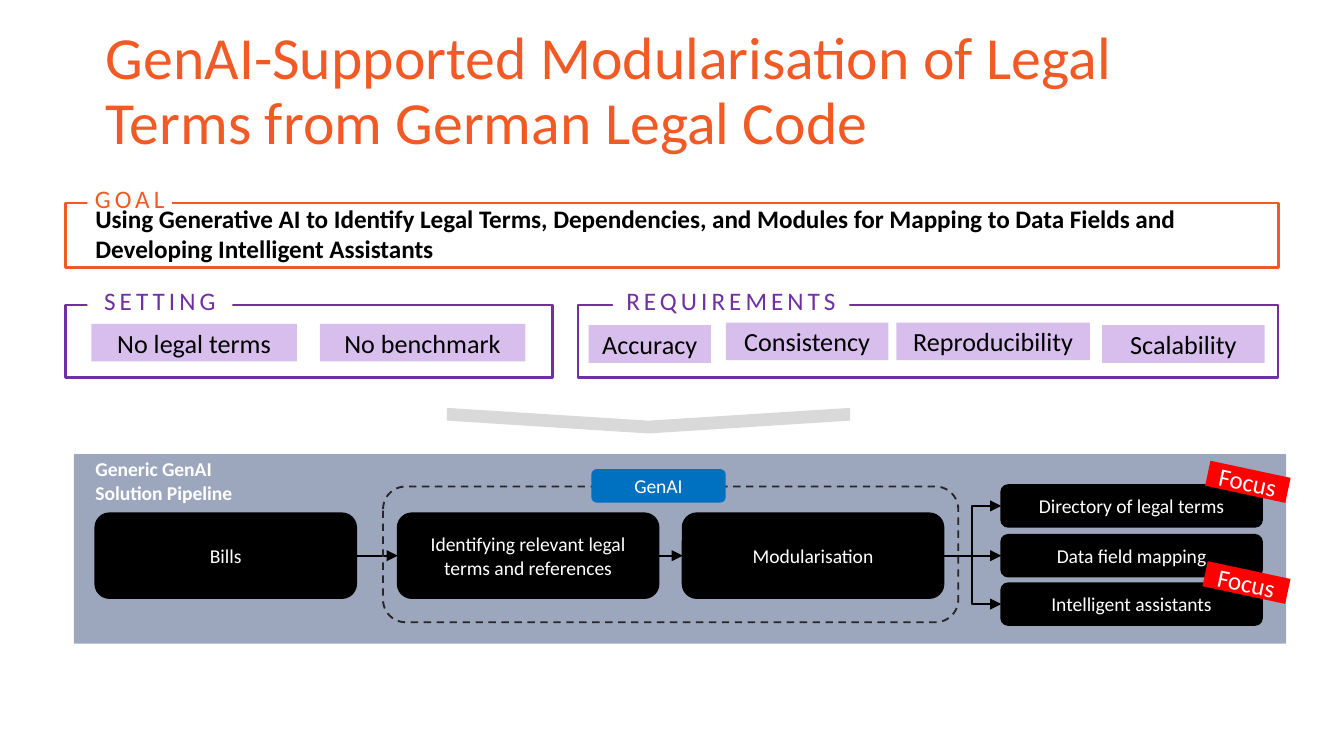
from lxml import etree
from pptx import Presentation
from pptx.dml.color import RGBColor
from pptx.enum.dml import MSO_LINE
from pptx.enum.shapes import MSO_CONNECTOR, MSO_SHAPE
from pptx.enum.text import MSO_ANCHOR, PP_ALIGN
from pptx.oxml.ns import qn
from pptx.util import Pt

PX = 9144  # 100 px to the inch
SLIDE_WIDTH = 1000 * PX
SLIDE_HEIGHT = SLIDE_WIDTH * 9 // 16
RECT, ROUND, CHEVRON = MSO_SHAPE.RECTANGLE, MSO_SHAPE.ROUNDED_RECTANGLE, MSO_SHAPE.CHEVRON
STRAIGHT, ELBOW = MSO_CONNECTOR.STRAIGHT, MSO_CONNECTOR.ELBOW
TOP, MIDDLE, BOTTOM = MSO_ANCHOR.TOP, MSO_ANCHOR.MIDDLE, MSO_ANCHOR.BOTTOM
LEFT, CENTER = PP_ALIGN.LEFT, PP_ALIGN.CENTER
LEFT_SIDE, RIGHT_SIDE = 1, 3

FONT = "Calibri"
COLORS = {
    "orange": "F15A24", "purple": "7030A0", "lilac": "D8BEEC", "panel": "374A78",
    "blue": "0070C0", "red": "FF0000", "grey": "D9D9D9", "dash": "262626",
    "black": "000000", "white": "FFFFFF",
}

TITLE = "GenAI-Supported Modularisation of Legal Terms from German Legal Code"
GOAL = ("Using Generative AI to Identify Legal Terms, Dependencies, and Modules "
        "for Mapping to Data Fields and Developing Intelligent Assistants")
PIPELINE_TITLE = ["Generic GenAI", "Solution Pipeline"]

# heading, colour, frame box, heading left and width
SECTIONS = [
    ("GOAL", "orange", (49, 151, 902, 48), 65, 63),
    ("SETTING", "purple", (49, 227, 362, 54), 65, 108),
    ("REQUIREMENTS", "purple", (430, 227, 521, 54), 456, 176),
]
# text, left, top, width
CHIPS = [
    ("No legal terms", 68, 241, 153),
    ("No benchmark", 238, 241, 153),
    ("Accuracy", 438, 242, 91),
    ("Consistency", 540, 240, 121),
    ("Reproducibility", 667, 240, 144),
    ("Scalability", 820, 242, 121),
]
STAGES = [
    ("Bills", 71),
    ("Identifying relevant legal terms and references", 296),
    ("Modularisation", 508),
]
OUTPUTS = [
    ("Directory of legal terms", 361),
    ("Data field mapping", 398),
    ("Intelligent assistants", 434),
]
FOCUS_TAGS = [(898, 349, 61), (896, 424, 63)]
BOX_WIDTH = 194

deck = Presentation()
deck.slide_width, deck.slide_height = SLIDE_WIDTH, SLIDE_HEIGHT
page = deck.slides.add_slide(deck.slide_layouts[6])


def rgb(name):
    return RGBColor.from_string(COLORS[name])


def write(shape, lines, size, color, bold=False, align=CENTER, anchor=MIDDLE,
          insets=(7, 4), tracking=None):
    frame = shape.text_frame
    frame.word_wrap = True
    frame.vertical_anchor = anchor
    frame.margin_left = frame.margin_right = insets[0] * PX
    frame.margin_top = frame.margin_bottom = insets[1] * PX
    for index, line in enumerate(lines):
        para = frame.add_paragraph() if index else frame.paragraphs[0]
        span = para.add_run()
        span.text = line
        para.alignment = align
        font = para.font
        font.name, font.size, font.bold = FONT, Pt(size), bold
        font.color.rgb = rgb(color)
        if tracking:
            span.font._element.set("spc", str(tracking))


def add_box(kind, box, fill=None, line=None, weight=1):
    shape = page.shapes.add_shape(kind, *(v * PX for v in box))
    shape.shadow.inherit = False
    if fill:
        shape.fill.solid()
        shape.fill.fore_color.rgb = rgb(fill)
    else:
        shape.fill.background()
    if line:
        shape.line.color.rgb = rgb(line)
        shape.line.width = Pt(weight)
    else:
        shape.line.fill.background()
    return shape


def add_text(box, lines, size, color, **style):
    shape = page.shapes.add_textbox(*(v * PX for v in box))
    write(shape, lines, size, color, **style)
    return shape


def add_step(text, box):
    shape = add_box(ROUND, box, "black", "black")
    write(shape, [text], 10.5, "white")
    return shape


def add_arrow(source, target, kind=STRAIGHT):
    """Join the right side of source to the left side of target."""
    arrow = page.shapes.add_connector(kind, 0, 0, 0, 0)
    arrow.begin_connect(source, RIGHT_SIDE)
    arrow.end_connect(target, LEFT_SIDE)
    arrow.line.color.rgb = rgb("black")
    arrow.line.width = Pt(1)
    etree.SubElement(arrow.line._get_or_add_ln(), qn("a:tailEnd"), type="triangle")
    etree.SubElement(arrow._element.spPr, qn("a:effectLst"))


title = add_text((69, 16, 862, 106), [TITLE], 32, "orange",
                 align=LEFT, anchor=TOP, insets=(10, 5))
title.text_frame.paragraphs[0].line_spacing = 0.9

for heading, color, box, left, width in SECTIONS:
    add_box(RECT, box, line=color, weight=1.5)
    label = add_box(RECT, (left, box[1] - 15, width, 23), "white")
    write(label, [heading], 13.5, color, anchor=BOTTOM, insets=(0, 0), tracking=220)
add_text((71, 151, 821, 45), [GOAL], 13.5, "black", bold=True,
         align=LEFT, anchor=BOTTOM, insets=(0, 0))

for text, left, top, width in CHIPS:
    write(add_box(RECT, (left, top, width, 28), "lilac"), [text], 14, "black")

add_box(CHEVRON, (473, 163, 19, 300), "grey").rotation = 90

panel = add_box(ROUND, (55, 338, 902, 141), "panel")
panel.adjustments[0] = 0
panel_color = panel._element.spPr.find(qn("a:solidFill"))[0]
etree.SubElement(panel_color, qn("a:alpha"), val="49000")
add_text((71, 340, 225, 35), PIPELINE_TITLE, 10.5, "white", bold=True,
         align=LEFT, anchor=TOP, insets=(0, 0))

stages = [add_step(text, (left, 382, BOX_WIDTH, 63)) for text, left in STAGES]
outputs = [add_step(text, (745, top, BOX_WIDTH, 31)) for text, top in OUTPUTS]
for source, target in zip(stages, stages[1:]):
    add_arrow(source, target)
for target, kind in zip(outputs, (ELBOW, STRAIGHT, ELBOW)):
    add_arrow(stages[-1], target, kind)

scope = add_box(ROUND, (285, 362, 428, 101), line="dash")
scope.line.dash_style = MSO_LINE.DASH
write(add_box(ROUND, (440, 349, 100, 25), "blue"), ["GenAI"], 10.5, "white")

for left, top, width in FOCUS_TAGS:
    tag = add_box(RECT, (left, top, width, 19), "red")
    tag.rotation = 12.1
    write(tag, ["Focus"], 13.5, "white")

deck.save("out.pptx")
